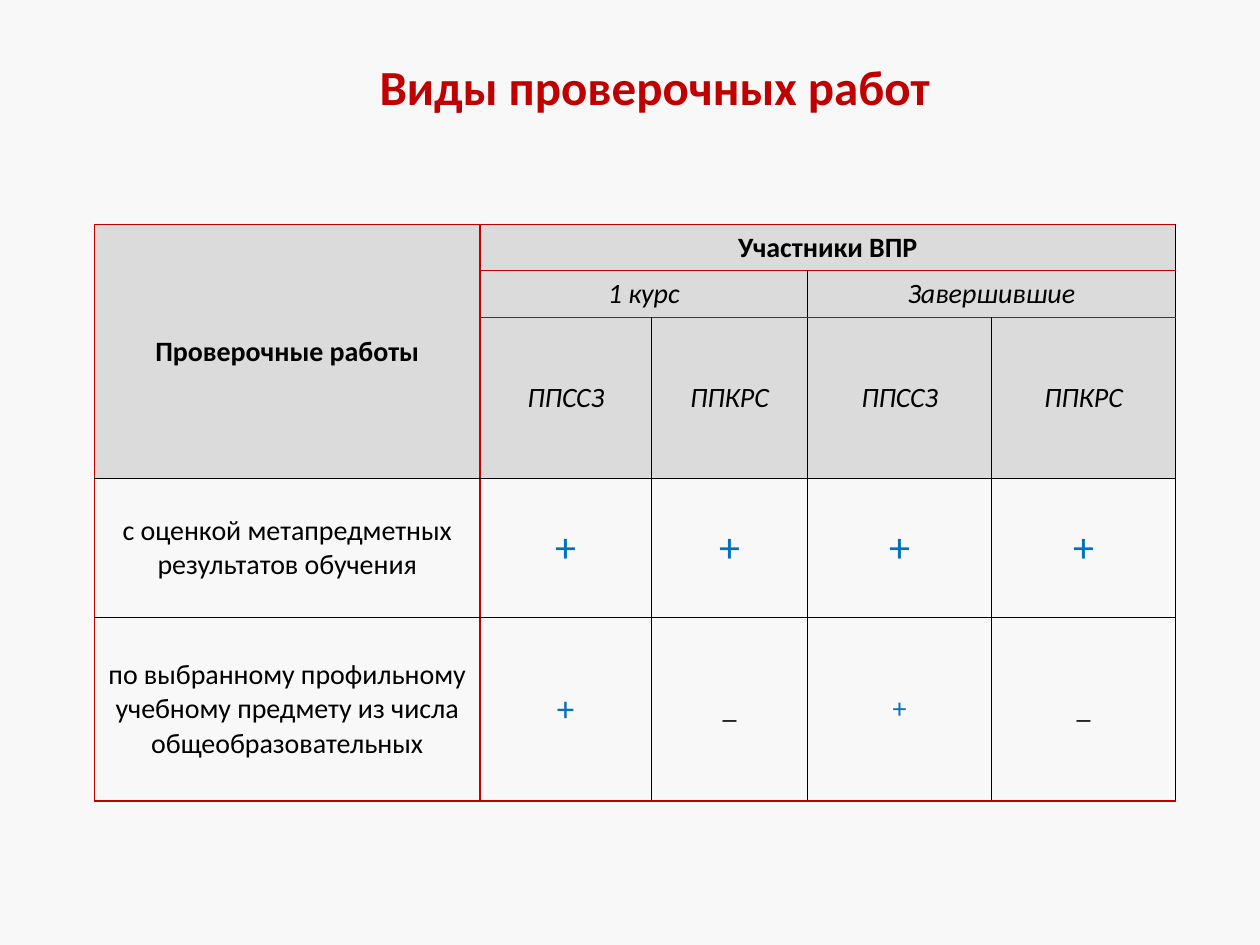
from lxml import etree
from pptx import Presentation
from pptx.dml.color import RGBColor
from pptx.enum.text import MSO_ANCHOR, PP_ALIGN
from pptx.oxml.ns import qn
from pptx.util import Inches, Pt

CENTER = PP_ALIGN.CENTER
MIDDLE = MSO_ANCHOR.MIDDLE
TITLE_ONLY = 5

FONT = "Calibri"
RED, BLUE, BLACK = "C00000", "0070C0", "000000"
HEADER_FILL, PAGE = "DBDBDB", "F8F8F8"

COLUMN_WIDTHS = [3.06, 1.36, 1.24, 1.46, 1.46]
ROW_HEIGHTS = [0.37, 0.37, 1.28, 1.1, 1.46]
HEADER_ROWS = 3

# Grid lines counted from the top and from the left: (colour, points)
ROW_LINES = [(RED, 0.5)] * 3 + [(BLACK, 0.5)] * 2 + [(RED, 1)]
COLUMN_LINES = [(RED, 1)] * 2 + [(BLACK, 0.5)] * 4

# First row, first column, last row, last column
MERGES = [(0, 0, 2, 0), (0, 1, 0, 4), (1, 1, 1, 2), (1, 3, 1, 4)]

BOLD, ITALIC = {"bold": True}, {"italic": True}
PROGRAMMES = ["ППССЗ", "ППКРС"] * 2


def plus(size):
    return "+", {"size": size, "color": BLUE}


MINUS = ("_", {})
ROWS = [
    [("Проверочные работы", BOLD), ("Участники ВПР", BOLD), None, None, None],
    [None, ("1 курс", ITALIC), None, ("Завершившие", ITALIC), None],
    [None] + [(programme, ITALIC) for programme in PROGRAMMES],
    [("с оценкой метапредметных результатов обучения", {})] + [plus(24)] * 4,
    [("по выбранному профильному учебному предмету из числа общеобразовательных", {}),
     plus(20), MINUS, plus(16), MINUS],
]


def rgb(value):
    return RGBColor.from_string(value)


class SlideBuilder:
    def __init__(self, presentation):
        self.slide = presentation.slides.add_slide(presentation.slide_layouts[TITLE_ONLY])
        background = self.slide.background.fill
        background.solid()
        background.fore_color.rgb = rgb(PAGE)

    def add_text(self, paragraph, text, size=16, color=BLACK, bold=False, italic=False):
        paragraph.alignment = CENTER
        run = paragraph.add_run()
        run.text = text
        font = run.font
        font.name, font.size = FONT, Pt(size)
        font.bold, font.italic = bold, italic
        font.color.rgb = rgb(color)

    def title(self, text, left, top, width, height):
        title = self.slide.shapes.title
        title.left, title.top = Inches(left), Inches(top)
        title.width, title.height = Inches(width), Inches(height)
        title.text_frame.vertical_anchor = MIDDLE
        self.add_text(title.text_frame.paragraphs[0], text, 28, RED, bold=True)

    def border(self, cell, side, line):
        color, points = line
        edge = etree.SubElement(cell._tc.get_or_add_tcPr(), qn(f"a:ln{side}"), w=str(Pt(points)))
        fill = etree.SubElement(edge, qn("a:solidFill"))
        etree.SubElement(fill, qn("a:srgbClr"), val=color)

    def cell(self, cell, row, column, content):
        bottom = row + (cell.span_height if cell.is_merge_origin else 1)
        right = column + (cell.span_width if cell.is_merge_origin else 1)
        self.border(cell, "L", COLUMN_LINES[column])
        self.border(cell, "R", COLUMN_LINES[right])
        self.border(cell, "T", ROW_LINES[row])
        self.border(cell, "B", ROW_LINES[bottom])
        if row < HEADER_ROWS:
            cell.fill.solid()
            cell.fill.fore_color.rgb = rgb(HEADER_FILL)
        else:
            cell.fill.background()
        cell.vertical_anchor = MIDDLE
        cell.margin_left = cell.margin_right = Inches(0.07)
        cell.margin_top = cell.margin_bottom = 0
        text, style = content
        paragraph = cell.text_frame.paragraphs[0]
        paragraph.space_after = Pt(21)
        self.add_text(paragraph, text, **style)

    def table(self, left, top):
        table = self.slide.shapes.add_table(
            len(ROW_HEIGHTS), len(COLUMN_WIDTHS), Inches(left), Inches(top),
            Inches(sum(COLUMN_WIDTHS)), Inches(sum(ROW_HEIGHTS))).table
        table.first_row = table.horz_banding = False
        for column, width in zip(table.columns, COLUMN_WIDTHS):
            column.width = Inches(width)
        for row, height in zip(table.rows, ROW_HEIGHTS):
            row.height = Inches(height)
        for first_row, first_column, last_row, last_column in MERGES:
            table.cell(first_row, first_column).merge(table.cell(last_row, last_column))
        for row, contents in enumerate(ROWS):
            for column, content in enumerate(contents):
                if content:
                    self.cell(table.cell(row, column), row, column, content)


def main():
    presentation = Presentation()
    presentation.slide_width, presentation.slide_height = Inches(10), Inches(7.5)
    builder = SlideBuilder(presentation)
    builder.title("Виды проверочных работ", 1.69, 0.21, 7.01, 0.94)
    builder.table(0.75, 1.78)
    presentation.save("out.pptx")


if __name__ == "__main__":
    main()
